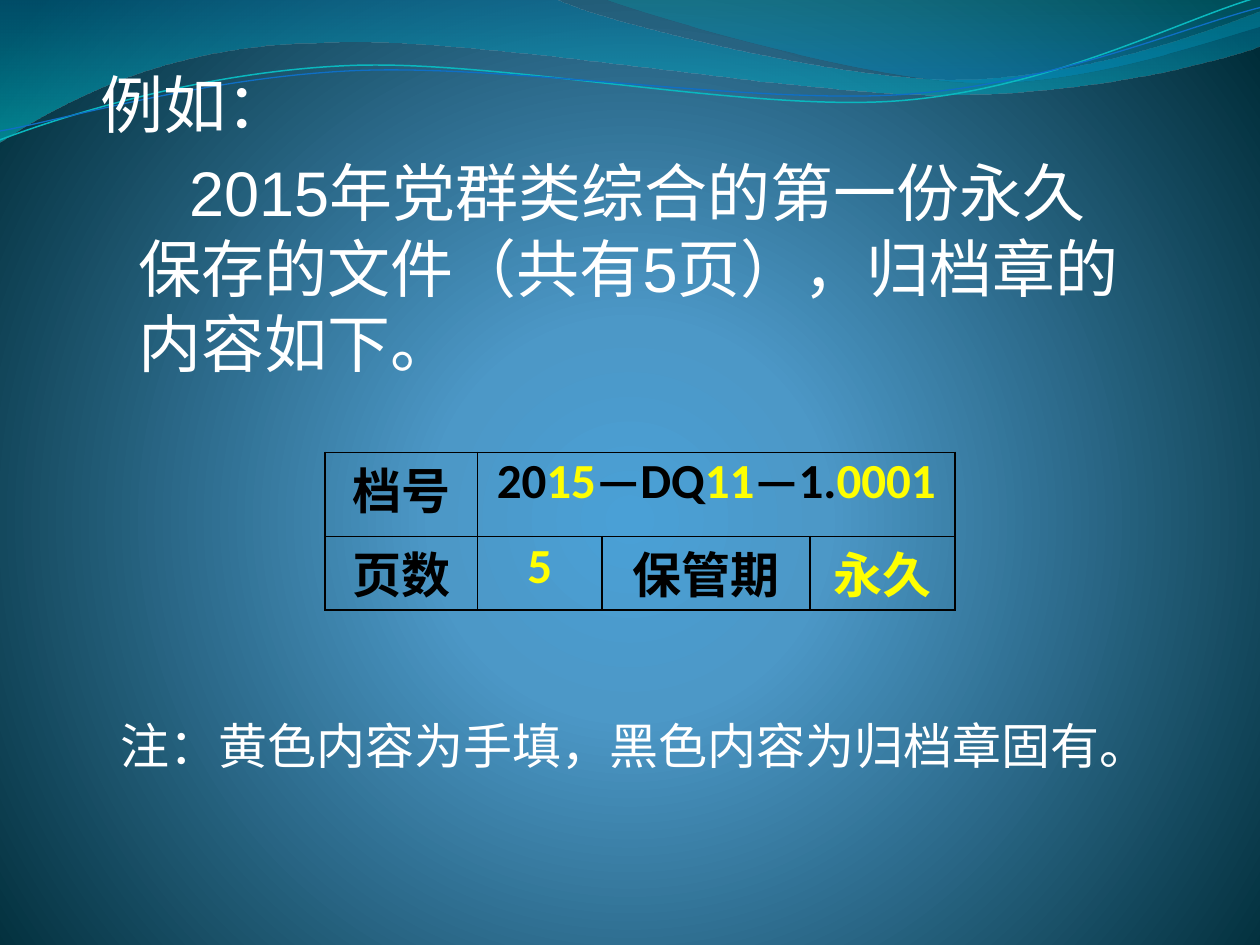
import math
from dataclasses import dataclass
from lxml import etree
from pptx import Presentation, util as u
from pptx.dml.color import RGBColor
from pptx.enum import text
from pptx.oxml import ns


@dataclass(frozen=True)
class Theme:
    white: str = "FFFFFF"
    black: str = "000000"
    yellow: str = "FFFF00"
    glow: tuple = ((0, "4AA0D6", 100), (25, "4C98C7", 100), (100, "002C38", 100))
    sea: tuple = ((0, "0074A1", 45), (100, "00C6CF", 55))
    foam: tuple = ((0, "00A1A9", 30), (80, "008BBF", 45))
    teal: str = "0AB8BF"
    blue: str = "0F6FC6"
    sans: str = "Arial"
    cell: str = "Calibri"
    big: int = 36
    mid: int = 28


def node(root, tag, **attrs):
    return etree.SubElement(root, ns.qn(tag), {k: str(v) for k, v in attrs.items()})


def tint(root, hue, alpha=100):
    clr = node(root, "a:srgbClr", val=hue)
    if alpha < 100:
        node(clr, "a:alpha", val=alpha * 1000)


def blend(root, stops):
    grad = next(root.iter(ns.qn("a:gradFill")))
    for kid in list(grad):
        grad.remove(kid)
    base = node(grad, "a:gsLst")
    for pos, hue, alpha in stops:
        tint(node(base, "a:gs", pos=pos * 1000), hue, alpha)
    return grad


def pairs(part):
    return list(zip(part[::2], part[1::2]))


def turn(part, mid, angle):
    cos, sin = math.cos(math.radians(angle)), math.sin(math.radians(angle))
    out = []
    for x, y in pairs(part):
        x, y = x - mid[0], y - mid[1]
        out += [mid[0] + x * cos - y * sin, mid[1] + x * sin + y * cos]
    return out


def bend(shape, parts):
    lines = shape.element.iter(ns.qn("a:lnTo"))
    lines = iter(list(lines))
    for part in parts:
        group = [next(lines) for _ in pairs(part)]
        if len(group) == 3:
            arc = etree.Element(ns.qn("a:cubicBezTo"))
            group[0].addprevious(arc)
            for line in group:
                arc.append(line[0])
                line.getparent().remove(line)


class Deck:
    cols, rows = 100, 75

    def __init__(self, theme):
        self.theme = theme
        self.file = Presentation()
        self.file.slide_width, self.file.slide_height = u.Inches(10), u.Inches(7.5)
        self.unit = self.file.slide_width // self.cols
        self.page = self.file.slides.add_slide(self.file.slide_layouts[1])
        self.shapes = self.page.shapes
        title = self.shapes.title.element
        title.getparent().remove(title)

    def grid(self, *nums):
        return [u.Emu(round(n * self.unit)) for n in nums]

    def back(self, stops):
        self.page.background.fill.gradient()
        grad = blend(self.page.element, stops)
        way = node(grad, "a:path", path="circle")
        node(way, "a:fillToRect", l=10000, t=110000, r=10000, b=100000)

    def trace(self, start, parts, close):
        pen = self.shapes.build_freeform(*self.grid(*start))
        pts = [self.grid(*p) for part in parts for p in pairs(part)]
        pen.add_line_segments(pts, close=close)
        shape = pen.convert_to_shape()
        bend(shape, parts)
        shape.shadow.inherit = False
        return shape

    def wave(self, stops, start, *parts):
        shape = self.trace(start, parts, True)
        shape.line.fill.background()
        shape.fill.gradient()
        grad = blend(shape.element, stops)
        node(grad, "a:lin", ang=5400000, scaled=1)

    def strand(self, hue, width, mid, *parts):
        tilt = 2.7
        start, *arcs = [turn(part, mid, tilt) for part in parts]
        shape = self.trace(start, arcs, False)
        shape.rotation = 360 - tilt
        shape.fill.background()
        shape.line.color.rgb = RGBColor.from_string(hue)
        shape.line.width = u.Pt(width)

    def run(self, para, words, size, face, hue, bold=False):
        run = para.add_run()
        run.text = words
        font = run.font
        font.size, font.name, font.bold = u.Pt(size), face, bold
        font.color.rgb = RGBColor.from_string(hue)

    def fill(self, shape, lines, size):
        frame = shape.text_frame
        frame.word_wrap = True
        frame.auto_size = text.MSO_AUTO_SIZE.NONE
        for i, (words, dent) in enumerate(lines):
            para = frame.add_paragraph() if i else frame.paragraphs[0]
            para.space_before = u.Pt(size * 0.2)
            props = para._p.get_or_add_pPr()
            left, first = self.grid(3, dent)
            props.set("marL", str(left))
            props.set("indent", str(first))
            node(props, "a:buNone")
            self.run(para, words, size, self.theme.sans, self.theme.white)

    def body(self, box, lines):
        shape = self.page.placeholders[1]
        shape.left, shape.top, shape.width, shape.height = self.grid(*box)
        self.shapes._spTree.append(shape.element)
        self.fill(shape, lines, self.theme.big)

    def note(self, box, words):
        shape = self.shapes.add_textbox(*self.grid(*box))
        self.fill(shape, [(words, -3)], self.theme.mid)

    def edge(self, cell):
        props = cell._tc.get_or_add_tcPr()
        for i, side in enumerate("LRTB"):
            line = node(props, f"a:ln{side}", w=u.Pt(1))
            tint(node(line, "a:solidFill"), self.theme.black)
            props.insert(i, line)

    def table(self, spot, wide, high, data):
        box = self.grid(*spot, sum(wide), sum(high))
        table = self.shapes.add_table(len(high), len(wide), *box).table
        table.first_row = table.horz_banding = False
        for col, size in zip(table.columns, self.grid(*wide)):
            col.width = size
        for row, size in zip(table.rows, self.grid(*high)):
            row.height = size
        table.cell(0, 1).merge(table.cell(0, len(wide) - 1))
        for cell in table.iter_cells():
            cell.fill.background()
            self.edge(cell)
            cell.margin_left, cell.margin_right = self.grid(0.7, 0.7)
            cell.margin_top = cell.margin_bottom = 0
        for r, row in enumerate(data):
            for c, runs in enumerate(row):
                para = table.cell(r, c).text_frame.paragraphs[0]
                para.alignment = text.PP_ALIGN.CENTER
                for words, hue in runs:
                    self.run(para, words, self.theme.mid, self.theme.cell, hue, True)


def main():
    look = Theme()
    ink, pen = look.black, look.yellow
    deck = Deck(look)
    deck.back(look.glow)
    deck.wave(look.sea, (0, -0.1), (44, -0.1),
              (47.6, 1.7, 66.4, 6.3, 75.8, 6.3), (85.3, 6.3, 95.8, 2.6, 100, 0.9),
              (100.1, 3.6), (98.3, 4.4, 87, 7.6, 74.6, 7.5),
              (62.2, 7.5, 38.2, 2.8, 25.7, 3.4), (12.9, 3.5, 4.6, 8.3, -0.1, 11.3))
    deck.wave(look.foam, (47.9, -0.1), (50.9, 1.1, 68.2, 6.2, 76.9, 6.5),
              (85.6, 6.9, 96.1, 3.2, 100, 2.1), (100, 0))
    deck.strand(look.teal, 0.85, (49.9, 5.75), (0, 11.1),
                (4.8, 9.3, 15.8, 5.7, 27.7, 5.2), (39.5, 4.7, 59.3, 8.9, 71.3, 8),
                (83.3, 7.1, 93.8, 1.5, 99.8, -0.2))
    deck.strand(look.blue, 0.75, (49.95, 5.9), (0, 10.4),
                (4.7, 9.6, 16.4, 6.1, 28.3, 5.6), (40.3, 5.1, 59.7, 8.3, 71.7, 7.5),
                (83.6, 6.7, 94.1, 2.1, 100, 0.6))
    code = [("20", ink), ("15", pen), ("—DQ", ink), ("11", pen), ("—1.", ink), ("0001", pen)]
    deck.table((25.8, 35.9), (12.1, 9.9, 16.5, 11.5), (6.7, 5.8), [
        [[("档号", ink)], code],
        [[("页数", ink)], [("5", pen)], [("保管期", ink)], [("永久", pen)]],
    ])
    deck.body((7, 4.7, 82.8, 27.3), [
        ("例如：", -3),
        ("2015年党群类综合的第一份永久保存的文件（共有5页），归档章的内容如下。", 4),
    ])
    deck.note((8.6, 56.3, 84.4, 7), "注：黄色内容为手填，黑色内容为归档章固有。")
    deck.file.save("out.pptx")


if __name__ == "__main__":
    main()
